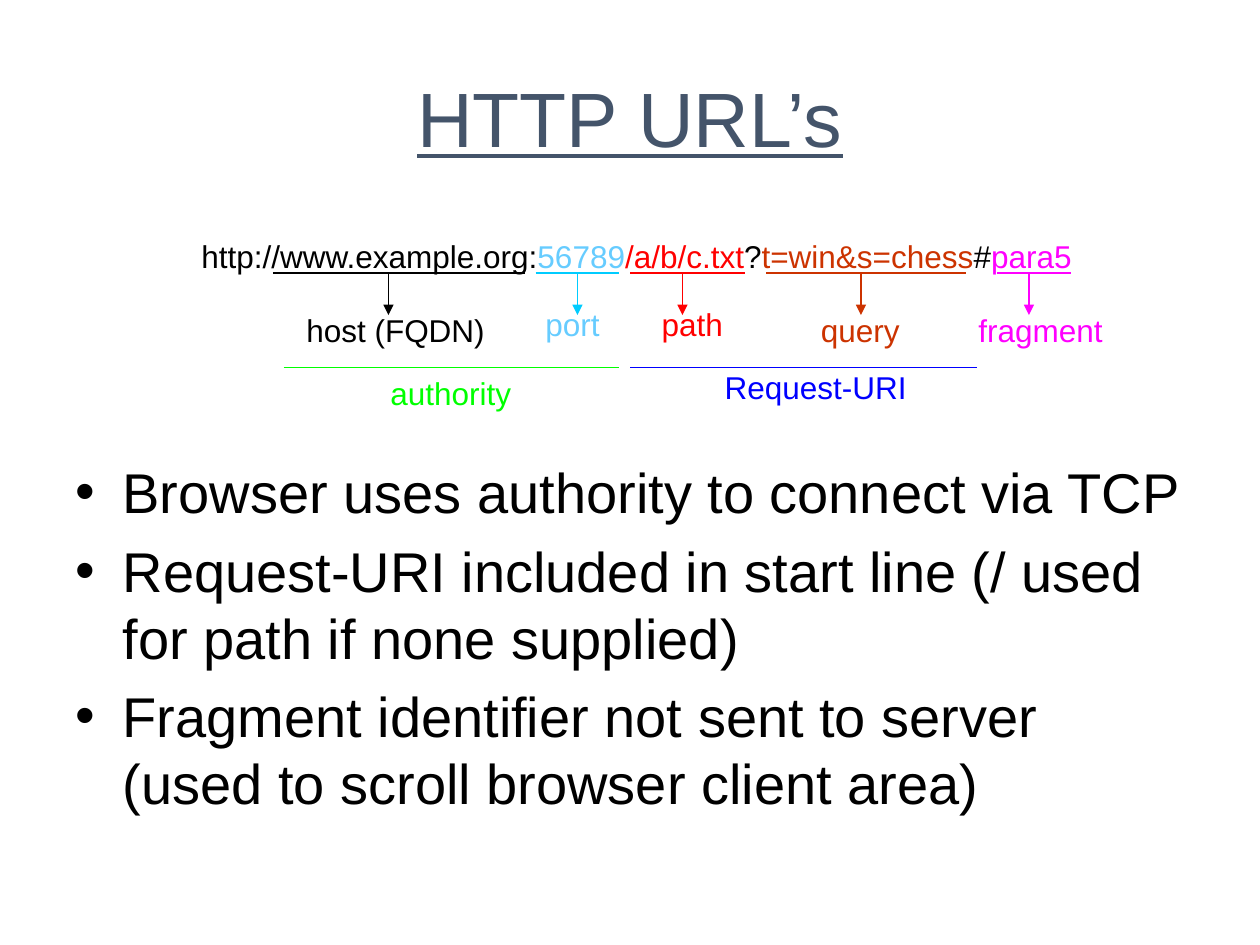
from pptx import Presentation
from pptx.dml.color import RGBColor
from pptx.enum.shapes import MSO_CONNECTOR
from pptx.enum.text import MSO_ANCHOR, PP_ALIGN
from pptx.oxml.ns import qn
from pptx.util import Pt
from lxml import etree

STRAIGHT = MSO_CONNECTOR.STRAIGHT
TOP, MIDDLE = MSO_ANCHOR.TOP, MSO_ANCHOR.MIDDLE
LEFT, CENTER = PP_ALIGN.LEFT, PP_ALIGN.CENTER
FONT = "Arial"
COLORS = {
    "title": "44546A", "black": "000000", "sky": "66CCFF", "cyan": "00CCFF",
    "red": "FF0000", "rust": "CC3300", "magenta": "FF00FF",
    "green": "00FF00", "blue": "0000FF",
}

# Content
TITLE = "HTTP URL’s"
URL = [
    ("http://www.example.org:", "black"), ("56789", "sky"),
    ("/a/b/c.txt", "red"), ("?", "black"), ("t=win&s=chess", "rust"),
    ("#", "black"), ("para5", "magenta"),
]
# label, text colour, line colour, underline start and end, arrow x, label box (left, top, width)
URL_PARTS = [
    ("host (FQDN)", "black", "black", 156, 300, 222, (168, 174, 117)),
    ("port", "sky", "cyan", 306, 354, 330, (304.5, 170.5, 45.5)),
    ("path", "red", "red", 360, 426, 390, (371, 170.5, 49.5)),
    ("query", "rust", "rust", 438, 552, 492, (462, 174, 60)),
    ("fragment", "magenta", "magenta", 570, 612, 588, (552, 174, 86)),
]
# label, colour, line start and end, label box (left, top, width)
GROUPS = [
    ("authority", "green", 162, 354, (216, 210, 83.5)),
    ("Request-URI", "blue", 360, 558, (407, 206.5, 119)),
]
BULLETS = [
    "Browser uses authority to connect via TCP",
    "Request-URI included in start line (/ used for path if none supplied)",
    "Fragment identifier not sent to server (used to scroll browser client area)",
]
UNDERLINE_Y, ARROW_END_Y, GROUP_Y = 156, 180, 210
LABEL_H = 29
INDENT = 27

prs = Presentation()
prs.slide_width, prs.slide_height = Pt(720), Pt(540)
s = prs.slides.add_slide(prs.slide_layouts[6])


def add_text(box, paragraphs, size=18, wrap=False, anchor=TOP, align=LEFT):
    """Each paragraph is a list of (text, colour) runs."""
    sp = s.shapes.add_textbox(*map(Pt, box))
    tf = sp.text_frame
    tf.word_wrap = wrap
    tf.vertical_anchor = anchor
    for i, runs in enumerate(paragraphs):
        p = tf.paragraphs[0] if i == 0 else tf.add_paragraph()
        p.alignment = align
        for text, color in runs:
            r = p.add_run()
            r.text = text
            r.font.name, r.font.size = FONT, Pt(size)
            r.font.color.rgb = RGBColor.from_string(COLORS[color])
    return tf


def add_line(x1, y1, x2, y2, color, arrow=False):
    c = s.shapes.add_connector(STRAIGHT, Pt(x1), Pt(y1), Pt(x2), Pt(y2))
    c.line.color.rgb = RGBColor.from_string(COLORS[color])
    c.line.width = Pt(0.75)
    if arrow:
        etree.SubElement(c.line._get_or_add_ln(), qn("a:tailEnd"), type="triangle")
    etree.SubElement(c._element.spPr, qn("a:effectLst"))


def add_label(text, color, box):
    add_text((*box, LABEL_H), [[(text, color)]])


# Title
tf = add_text((36, 21.6, 648, 90), [[(TITLE, "title")]], 44, True, MIDDLE, CENTER)
tf.paragraphs[0].runs[0].font.underline = True

# Bulleted text
tf = add_text((36, 258, 648, 224.5), [[(b, "black")] for b in BULLETS], 32, True)
for i, p in enumerate(tf.paragraphs):
    if i:
        p.space_before = Pt(6.4)
    pPr = p._p.get_or_add_pPr()
    pPr.set("marL", str(Pt(INDENT)))
    pPr.set("indent", str(-Pt(INDENT)))
    etree.SubElement(pPr, qn("a:buFont"), typeface=FONT)
    etree.SubElement(pPr, qn("a:buChar"), char="•")

# URL with its parts underlined and named
add_text((108, 132, 513, LABEL_H), [URL])
for label, color, line, x1, x2, arrow_x, box in URL_PARTS:
    add_line(x1, UNDERLINE_Y, x2, UNDERLINE_Y, line)
    add_line(arrow_x, UNDERLINE_Y, arrow_x, ARROW_END_Y, line, arrow=True)
    add_label(label, color, box)

# Groups of parts
for label, color, x1, x2, box in GROUPS:
    add_line(x1, GROUP_Y, x2, GROUP_Y, color)
    add_label(label, color, box)

prs.save("out.pptx")
